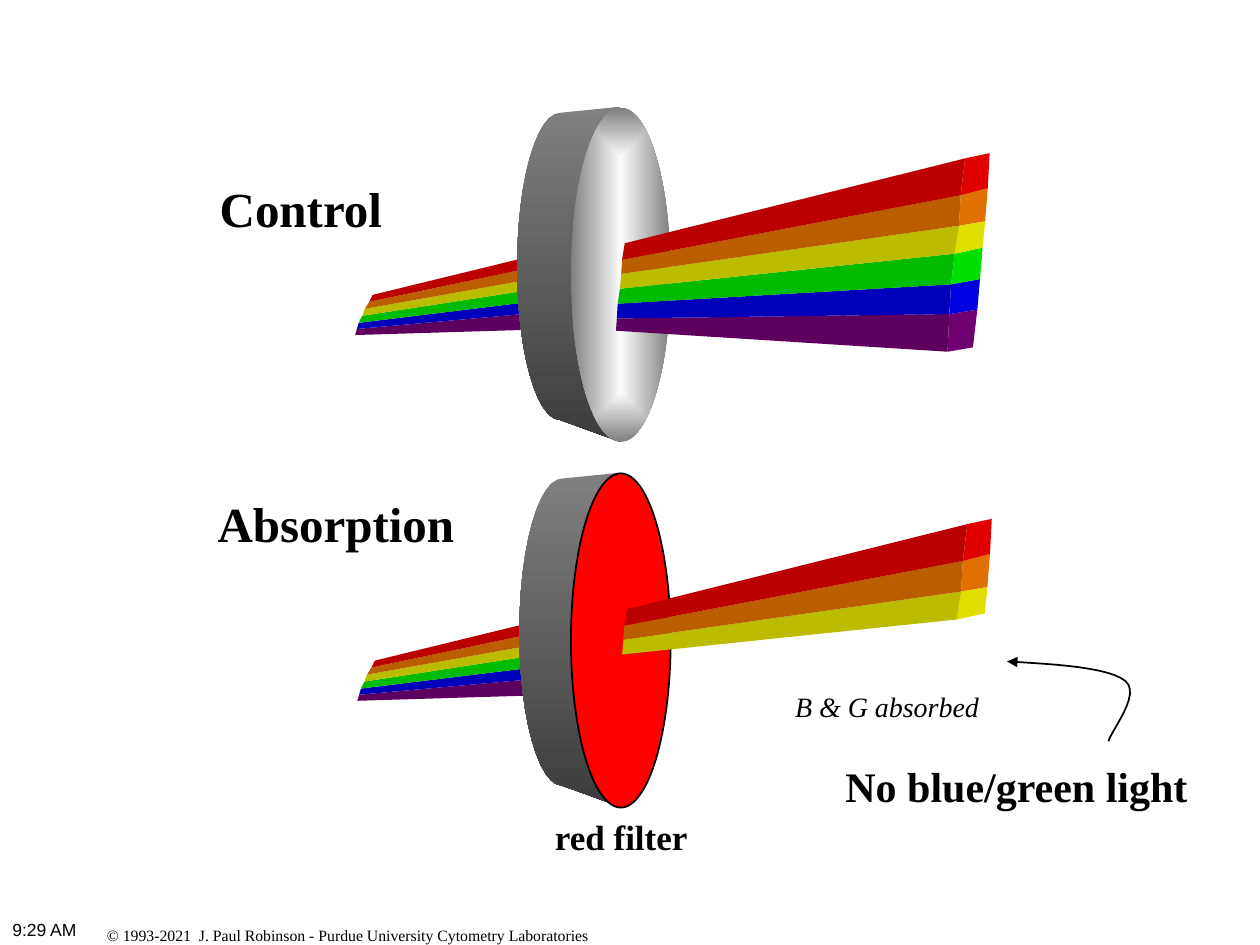
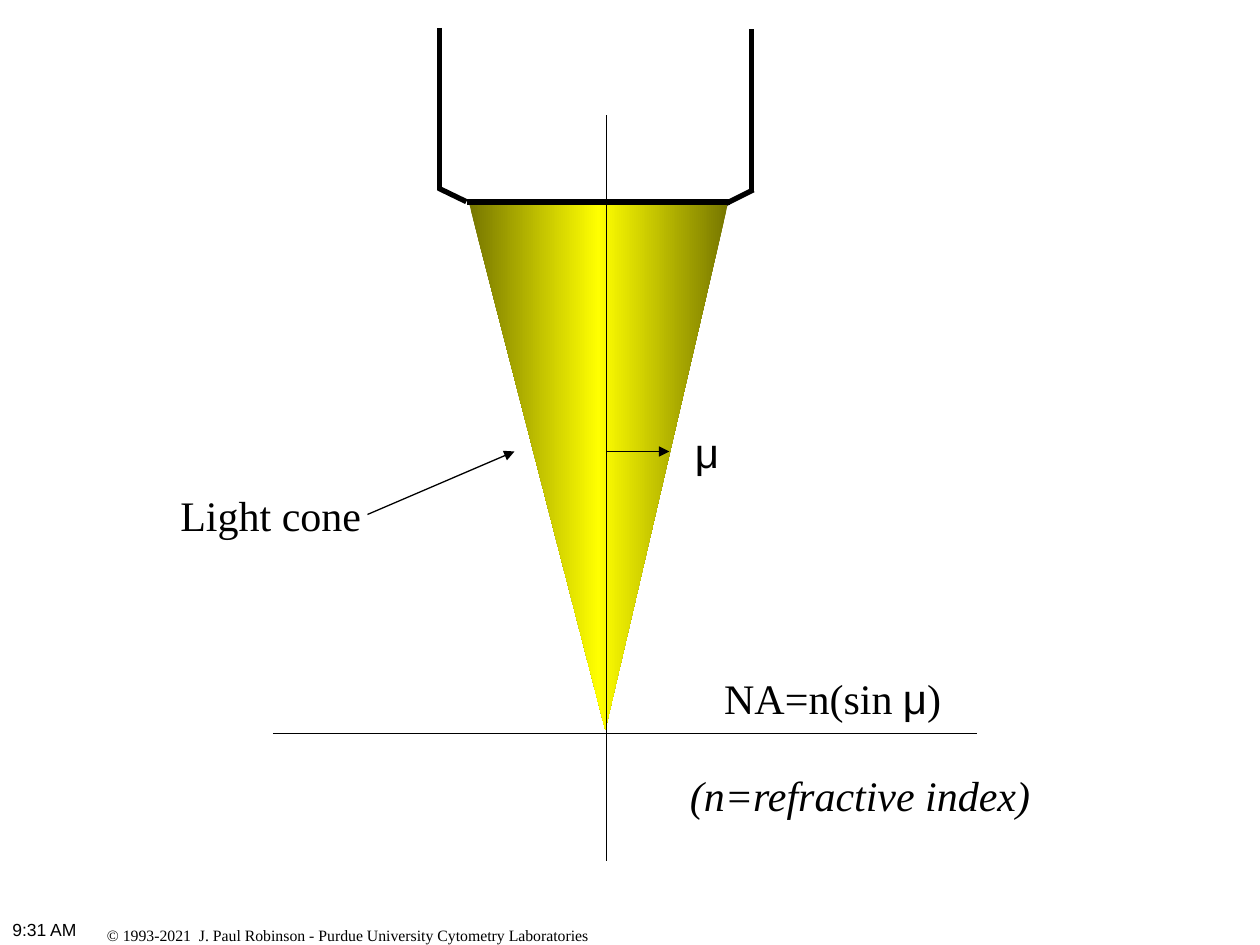
from copy import deepcopy
from dataclasses import dataclass
from itertools import pairwise
from math import cos, pi, radians, sin

from lxml import etree
from pptx import Presentation
from pptx.dml.color import RGBColor
from pptx.enum.shapes import MSO_CONNECTOR, MSO_SHAPE
from pptx.enum.text import PP_ALIGN
from pptx.oxml import parse_xml
from pptx.oxml.ns import nsdecls, qn
from pptx.util import Pt

STRAIGHT = MSO_CONNECTOR.STRAIGHT
OVAL = MSO_SHAPE.OVAL
TRIANGLE = MSO_SHAPE.ISOSCELES_TRIANGLE
LEFT, CENTER = PP_ALIGN.LEFT, PP_ALIGN.CENTER


@dataclass(frozen=True)
class Theme:
    serif: str = "Times New Roman"
    sans: str = "Arial"
    ink: RGBColor = RGBColor(0, 0, 0)
    red_filter: RGBColor = RGBColor(255, 0, 0)
    glass_light: RGBColor = RGBColor(0xFC, 0xFC, 0xFC)
    glass_dark: RGBColor = RGBColor(0x80, 0x80, 0x80)
    rim_dark: RGBColor = RGBColor(0x3C, 0x3C, 0x3C)
    cone_light: RGBColor = RGBColor(255, 255, 0)
    cone_dark: RGBColor = RGBColor(0x76, 0x76, 0)
    spectrum: tuple = ((255, 0, 0), (255, 128, 0), (255, 255, 0),
                       (0, 255, 0), (0, 0, 255), (128, 0, 128))
    shade: float = 0.735
    lit: float = 0.88
    heading: int = 28
    label: int = 24
    caption: int = 20
    remark: int = 16
    time: int = 10
    footer: int = 9
    thin: float = 0.75
    curve: int = 1
    thick: int = 3


THEME = Theme()


def add_text(page, at, spans, size, bold=False, italic=False, align=LEFT, wrap=False):
    """Place one line of (text, font name) spans; at is left, top, width, height."""
    box = page.shapes.add_textbox(*map(Pt, at))
    box.text_frame.word_wrap = wrap
    para = box.text_frame.paragraphs[0]
    para.alignment = align
    for text, face in spans:
        span = para.add_run()
        span.text = text
        span.font.name = face
        span.font.size = Pt(size)
        span.font.bold, span.font.italic = bold, italic
        span.font.color.rgb = THEME.ink


def add_outline(page, points, shift=(0, 0), close=True, tilt=0):
    """Join points with straight segments, in a frame turned by tilt degrees."""
    c, s = cos(radians(tilt)), sin(radians(tilt))
    placed = [(x + shift[0], y + shift[1]) for x, y in points]
    corners = [(Pt(x * c + y * s), Pt(y * c - x * s)) for x, y in placed]
    builder = page.shapes.build_freeform(*corners[0], scale=1.0)
    builder.add_line_segments(corners[1:], close=close)
    shape = builder.convert_to_shape()
    middle_x, middle_y = shape.left + shape.width / 2, shape.top + shape.height / 2
    shape.left = round(middle_x * c - middle_y * s - shape.width / 2)
    shape.top = round(middle_x * s + middle_y * c - shape.height / 2)
    shape.rotation = tilt
    shape.shadow.inherit = False
    shape.fill.background()
    shape.line.fill.background()
    return shape


deck = Presentation()
deck.slide_width, deck.slide_height = Pt(720), Pt(540)
blank = deck.slide_layouts[6]
filter_page, cone_page = deck.slides.add_slide(blank), deck.slides.add_slide(blank)

for page, time in ((filter_page, "9:29 AM"), (cone_page, "9:31 AM")):
    add_text(page, (54, 525.5, 399, 18),
             [("© 1993-2021  J. Paul Robinson - Purdue University Cytometry Laboratories",
               THEME.serif)], THEME.footer, wrap=True)
    add_text(page, (0, 521.5, 168, 37), [(time, THEME.sans)], THEME.time, wrap=True)

# Light through a clear disc and through a red filter: band edges from red to purple
source_edge = [(213, 168.5), (211, 172.5), (208.5, 176.5), (207, 180.5),
               (205, 184.5), (204, 188), (203, 191.5)]
entry_edge = [(336, 138.5), (332, 147), (329, 155), (327, 162),
              (323.5, 170), (321, 177.5), (317, 188)]
exit_edge = [(357, 139), (355.5, 148.5), (355, 156.5), (354.25, 165),
             (353, 173.5), (352.5, 182), (352, 189)]
fold_edge = [(551.5, 90.5), (549, 111.5), (548, 129), (545.5, 145),
             (543.5, 162.5), (542.5, 179.5), (541.5, 201)]
end_edge = [(565.5, 87.5), (564.5, 107.5), (563, 126.5), (561.5, 141.5),
            (560, 159.5), (558.5, 177), (556, 198.5)]
incoming = [(source_edge, entry_edge, THEME.shade, 334.9)]
outgoing = [(fold_edge, end_edge, THEME.lit, 0),
            (exit_edge, fold_edge, THEME.shade, 329.2)]

STEPS = 24
rim = [(354.5, 61)]
rim += [(320 - 24.5 * sin(pi * i / STEPS), 152.25 - 87.75 * cos(pi * i / STEPS))
        for i in range(STEPS + 1)]
rim += [(354.5, 252.5)]

for shift, passed, filtered in (((0, 0), 6, False), ((1.25, 209), 3, True)):
    for beams, count in ((incoming, 6), (outgoing, passed)):
        if beams is outgoing:
            side = add_outline(filter_page, rim, shift)
            side.fill.gradient()
            side.fill.gradient_angle = 270
            for stop, color in zip(side.fill.gradient_stops,
                                   (THEME.glass_dark, THEME.rim_dark)):
                stop.color.rgb = color

            face = filter_page.shapes.add_shape(
                OVAL, Pt(326.25), Pt(61.5 + shift[1]), Pt(57), Pt(191))
            face.shadow.inherit = False
            if filtered:
                face.fill.solid()
                face.fill.fore_color.rgb = THEME.red_filter
                face.line.color.rgb = THEME.ink
                face.line.width = Pt(THEME.curve)
            else:
                face.line.fill.background()
                face.fill.gradient()
                for stop, color in zip(face.fill.gradient_stops,
                                       (THEME.glass_light, THEME.glass_dark)):
                    stop.color.rgb = color
                linear = face._element.spPr.find(".//" + qn("a:lin"))
                linear.getparent().replace(linear, parse_xml(
                    f'<a:path {nsdecls("a")} path="shape"><a:fillToRect '
                    'l="50000" t="50000" r="50000" b="50000"/></a:path>'))
        for near, far, brightness, tilt in beams:
            bands = list(zip(THEME.spectrum, pairwise(near), pairwise(far)))[:count]
            for hue, (near_top, near_low), (far_top, far_low) in reversed(bands):
                band = add_outline(filter_page, (near_top, far_top, far_low, near_low),
                                   shift, tilt=tilt)
                band.fill.solid()
                band.fill.fore_color.rgb = RGBColor(*(round(c * brightness) for c in hue))

for text, at, size, bold in (
        ("Control", (118.5, 98.5, 108, 41), THEME.heading, True),
        ("Absorption", (117.25, 278.5, 150, 41), THEME.heading, True),
        ("No blue/green light", (476, 431.25, 210, 36), THEME.label, True),
        ("red filter", (310, 462.25, 90, 31), THEME.caption, True),
        ("B & G absorbed", (447.25, 390.25, 120, 27), THEME.remark, False)):
    add_text(filter_page, at, [(text, THEME.serif)], size, bold=bold, italic=not bold)

# Curved pointer, two cubic curves traced in short steps
pointer_path = [(575.5, 378)]
for controls in (((575.5, 378), (604, 379.5), (633.5, 381.5), (643, 389)),
                 ((643, 389), (652.5, 396.5), (635, 417.5), (633.5, 423.5))):
    for i in range(1, 13):
        t = i / 12
        weights = ((1 - t) ** 3, 3 * t * (1 - t) ** 2, 3 * t * t * (1 - t), t ** 3)
        pointer_path.append(tuple(sum(w * p[axis] for w, p in zip(weights, controls))
                                  for axis in (0, 1)))
pointer = add_outline(filter_page, pointer_path, close=False, tilt=334.9)
pointer.line.color.rgb = THEME.ink
pointer.line.width = Pt(THEME.curve)
etree.SubElement(pointer.line._get_or_add_ln(), qn("a:headEnd"), type="triangle")

# Objective lens with its light cone
cone = cone_page.shapes.add_shape(TRIANGLE, Pt(268), Pt(116), Pt(148), Pt(301))
cone.rotation = 180
cone.adjustments[0] = 0.474
cone.shadow.inherit = False
cone.line.fill.background()
cone.fill.gradient()
cone.fill.gradient_angle = 0
for stop in cone.fill.gradient_stops:
    stop.color.rgb = THEME.cone_dark
first_stop = cone._element.spPr.find(".//" + qn("a:gs"))
first_stop.addnext(deepcopy(first_stop))
middle = cone.fill.gradient_stops[1]
middle.position = 0.5
middle.color.rgb = THEME.cone_light

for ends, width, arrow in (
        ((156, 419, 558, 419), THEME.thin, False),
        ((346.5, 491.75, 346.5, 66), THEME.thin, False),
        ((346.5, 258, 382.5, 258), THEME.thin, True),
        ((210, 294, 294, 258), THEME.thin, True),
        ((251.25, 16, 251.25, 108.5), THEME.thick, False),
        ((250.5, 107.5, 266.5, 115.25), THEME.thick, False),
        ((429.25, 109.5, 429.25, 16.75), THEME.thick, False),
        ((415, 116.25, 430.5, 108.5), THEME.thick, False),
        ((267, 115.5, 417, 115.5), THEME.thick, False)):
    line = cone_page.shapes.add_connector(STRAIGHT, *map(Pt, ends))
    line.line.color.rgb = THEME.ink
    line.line.width = Pt(width)
    etree.SubElement(line._element.spPr, qn("a:effectLst"))
    if arrow:
        etree.SubElement(line.line._get_or_add_ln(), qn("a:tailEnd"), type="triangle")

add_text(cone_page, (390, 240, 30, 36), [("μ", THEME.sans)], THEME.label, wrap=True)
add_text(cone_page, (406.75, 381, 139, 36),
         [("NA=n(sin ", THEME.serif), ("μ", THEME.sans), (")", THEME.serif)], THEME.label)
add_text(cone_page, (96, 276, 122, 36), [("Light cone", THEME.serif)], THEME.label)
add_text(cone_page, (386.75, 436.25, 209.5, 36), [("(n=refractive index)", THEME.serif)],
         THEME.label, italic=True, align=CENTER)

deck.save("out.pptx")
